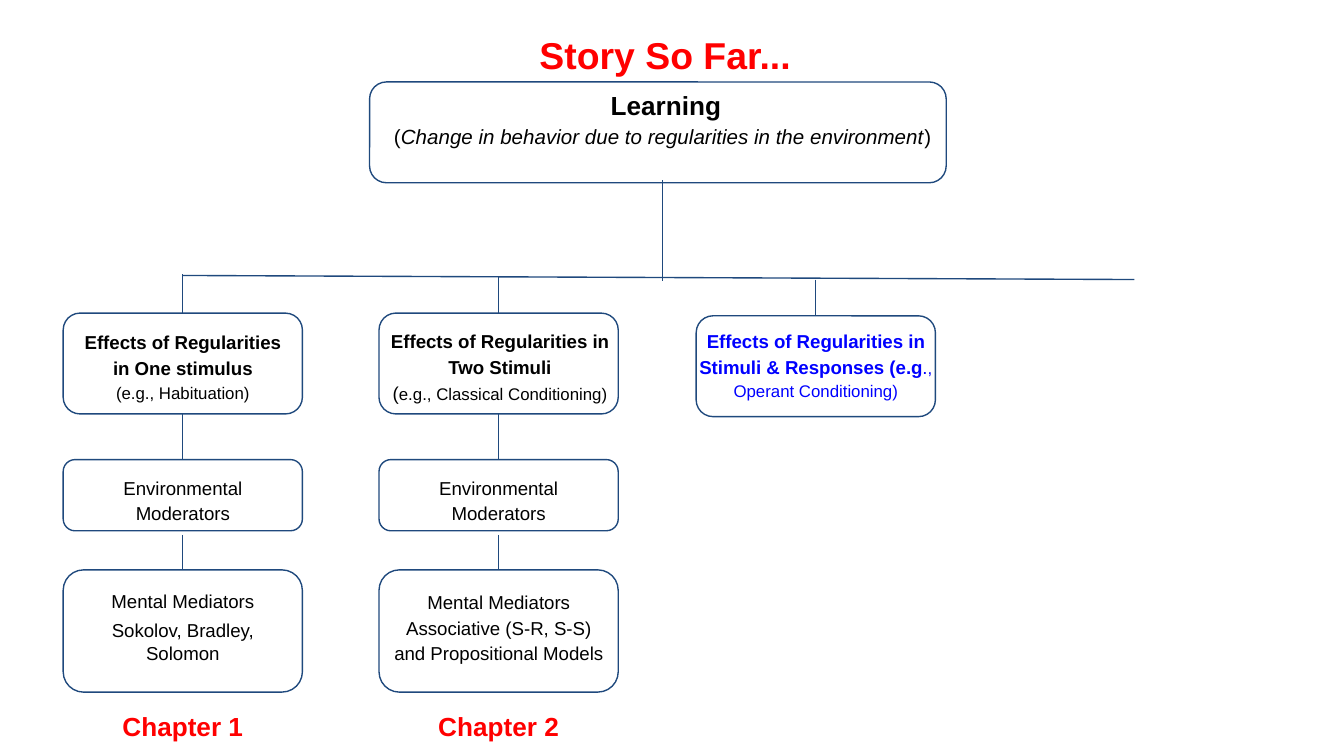
from dataclasses import dataclass
from typing import Optional

from pptx import Presentation
from pptx.dml.color import RGBColor
from pptx.enum.shapes import MSO_CONNECTOR as Connector, MSO_SHAPE as Preset
from pptx.enum.text import MSO_ANCHOR as Anchor, PP_ALIGN as Align
from pptx.oxml.ns import qn
from pptx.util import Inches, Pt
from lxml.etree import SubElement


@dataclass(frozen=True)
class Theme:
    font: str = "Arial"
    ink: RGBColor = RGBColor(0x00, 0x00, 0x00)
    outline: RGBColor = RGBColor(0x1F, 0x49, 0x7D)
    heading: RGBColor = RGBColor(0xFF, 0x00, 0x00)
    current: RGBColor = RGBColor(0x00, 0x00, 0xFF)
    title: float = 20
    label: float = 14
    definition: float = 11
    body: float = 10
    example: float = 9
    line: float = 0.75
    spacing: float = 1.15
    inset: float = 0.1


THEME = Theme()


@dataclass(frozen=True)
class Area:
    left: float
    top: float
    width: float
    height: float


@dataclass(frozen=True)
class Span:
    """A stretch of text; None means the paragraph's own setting."""
    text: str
    size: Optional[float] = None
    bold: Optional[bool] = None
    italic: Optional[bool] = None


@dataclass(frozen=True)
class Para:
    spans: tuple[Span, ...]
    size: Optional[float] = THEME.body
    bold: Optional[bool] = False
    color: RGBColor = THEME.ink
    indent: float = 0


@dataclass(frozen=True)
class Column:
    left: float
    box_top: float
    stem_top: float
    text_area: Area
    effect: tuple[Para, ...]
    mediators: tuple[Para, ...] = ()
    theorists: str = ""
    chapter: str = ""


def plain(text: str, size: float = THEME.body, bold: bool = False,
          color: RGBColor = THEME.ink, indent: float = 0) -> Para:
    return Para((Span(text),), size, bold, color, indent)


def fill_text(frame, paras: tuple[Para, ...], spacing: float = THEME.spacing) -> None:
    frame.word_wrap = True
    frame.margin_left = frame.margin_right = Inches(THEME.inset)
    frame.margin_top = frame.margin_bottom = Inches(THEME.inset)
    for index, item in enumerate(paras):
        para = frame.add_paragraph() if index else frame.paragraphs[0]
        para.alignment = Align.CENTER
        para.line_spacing = spacing
        if item.indent:
            para._p.get_or_add_pPr().set("marL", str(Inches(item.indent)))
        para.font.name = THEME.font
        para.font.color.rgb = item.color
        para.font.bold = item.bold
        if item.size:
            para.font.size = Pt(item.size)
        for span in item.spans:
            run = para.add_run()
            run.text = span.text
            if span.size:
                run.font.size = Pt(span.size)
            if span.bold is not None:
                run.font.bold = span.bold
            if span.italic is not None:
                run.font.italic = span.italic


def lengths(area: Area) -> tuple[int, ...]:
    return tuple(map(Inches, (area.left, area.top, area.width, area.height)))


def add_text(page, area: Area, *paras: Para) -> None:
    fill_text(page.shapes.add_textbox(*lengths(area)).text_frame, paras)


def add_box(page, area: Area):
    box = page.shapes.add_shape(Preset.ROUNDED_RECTANGLE, *lengths(area))
    box.shadow.inherit = False
    box.fill.background()
    box.line.color.rgb = THEME.outline
    box.line.width = Pt(THEME.line)
    return box


def add_line(page, start: tuple[float, float], end: tuple[float, float],
             above=None, below=None) -> None:
    """Draw a line, joined to the bottom of `above` and the top of `below`."""
    line = page.shapes.add_connector(
        Connector.STRAIGHT, *map(Inches, (*start, *end)))
    line.line.color.rgb = THEME.outline
    line.line.width = Pt(THEME.line)
    SubElement(line._element.spPr, qn("a:effectLst"))
    if above is not None:
        line.begin_connect(above, 2)
    if below is not None:
        line.end_connect(below, 0)


BOX_WIDTH, BOX_HEIGHT = 1.78, 0.75
MODERATORS_TOP, MEDIATORS_TOP, CHAPTER_TOP = 3.42, 4.24, 5.15

COLUMNS = (
    Column(
        0.47, 2.33, 2.04, Area(0.47, 2.34, BOX_WIDTH, BOX_HEIGHT),
        (plain("Effects of Regularities in One stimulus", bold=True),
         plain("(e.g., Habituation)", THEME.example)),
        (plain("Mental Mediators"),),
        "Sokolov, Bradley, Solomon", "Chapter 1"),
    Column(
        2.82, 2.33, 2.06, Area(2.75, 2.33, 1.94, BOX_HEIGHT),
        (plain("Effects of Regularities in Two Stimuli", bold=True),
         Para((Span("(", THEME.body),
               Span("e.g., Classical Conditioning)", THEME.example)), None)),
        (plain("Mental Mediators"),
         plain("Associative (S-R, S-S) and Propositional Models")),
        chapter="Chapter 2"),
    Column(
        5.18, 2.35, 2.08, Area(5.1, 2.33, 1.94, BOX_HEIGHT),
        (Para((Span("Effects of Regularities in Stimuli & Responses (e.g",
                    THEME.body, True),
               Span(".", THEME.body, False),
               Span(", Operant Conditioning)", THEME.example, False)),
              None, None, THEME.current),)),
)


def draw_root(page) -> None:
    add_box(page, Area(2.75, 0.61, 4.29, BOX_HEIGHT))
    add_line(page, (4.93, 1.34), (4.93, 2.09))
    add_line(page, (1.36, 2.05), (8.44, 2.08))
    add_text(page, Area(2.32, 0.53, 5.22, 0.81),
             plain("Learning", THEME.label, True, indent=0.05),
             Para((Span("("),
                   Span("Change in behavior due to regularities in the environment",
                        italic=True),
                   Span(")")), THEME.definition))
    add_text(page, Area(3.33, 0.09, 3.24, 0.46),
             plain("Story So Far...", THEME.title, True, THEME.heading))


def draw_column(page, column: Column) -> None:
    left, center = column.left, column.left + BOX_WIDTH / 2
    effect = add_box(page, Area(left, column.box_top, BOX_WIDTH, BOX_HEIGHT))
    add_line(page, (center, column.stem_top), (center, column.box_top), below=effect)
    add_text(page, column.text_area, *column.effect)
    if not column.chapter:
        return

    moderators = add_box(page, Area(left, MODERATORS_TOP, BOX_WIDTH, 0.53))
    add_line(page, (center, column.box_top + BOX_HEIGHT), (center, MODERATORS_TOP),
             effect, moderators)
    add_text(page, Area(left, MODERATORS_TOP, BOX_WIDTH, 0.47),
             plain("Environmental Moderators"))

    mediators = add_box(page, Area(left, MEDIATORS_TOP, BOX_WIDTH, 0.91))
    add_line(page, (center, 3.98), (center, MEDIATORS_TOP), below=mediators)
    add_text(page, Area(left, 4.27, BOX_WIDTH, 0.84), *column.mediators)
    if column.theorists:
        frame = mediators.text_frame
        fill_text(frame, (plain(column.theorists),), spacing=1.0)
        frame.vertical_anchor = Anchor.MIDDLE
        frame.margin_top = Inches(0.26)
    add_text(page, Area(left, CHAPTER_TOP, BOX_WIDTH, 0.37),
             plain(column.chapter, THEME.label, True, THEME.heading))


def main() -> None:
    deck = Presentation()
    deck.slide_width = Inches(10)
    deck.slide_height = deck.slide_width * 9 // 16
    page = deck.slides.add_slide(deck.slide_layouts[6])
    draw_root(page)
    for column in COLUMNS:
        draw_column(page, column)
    deck.save("out.pptx")


if __name__ == "__main__":
    main()
